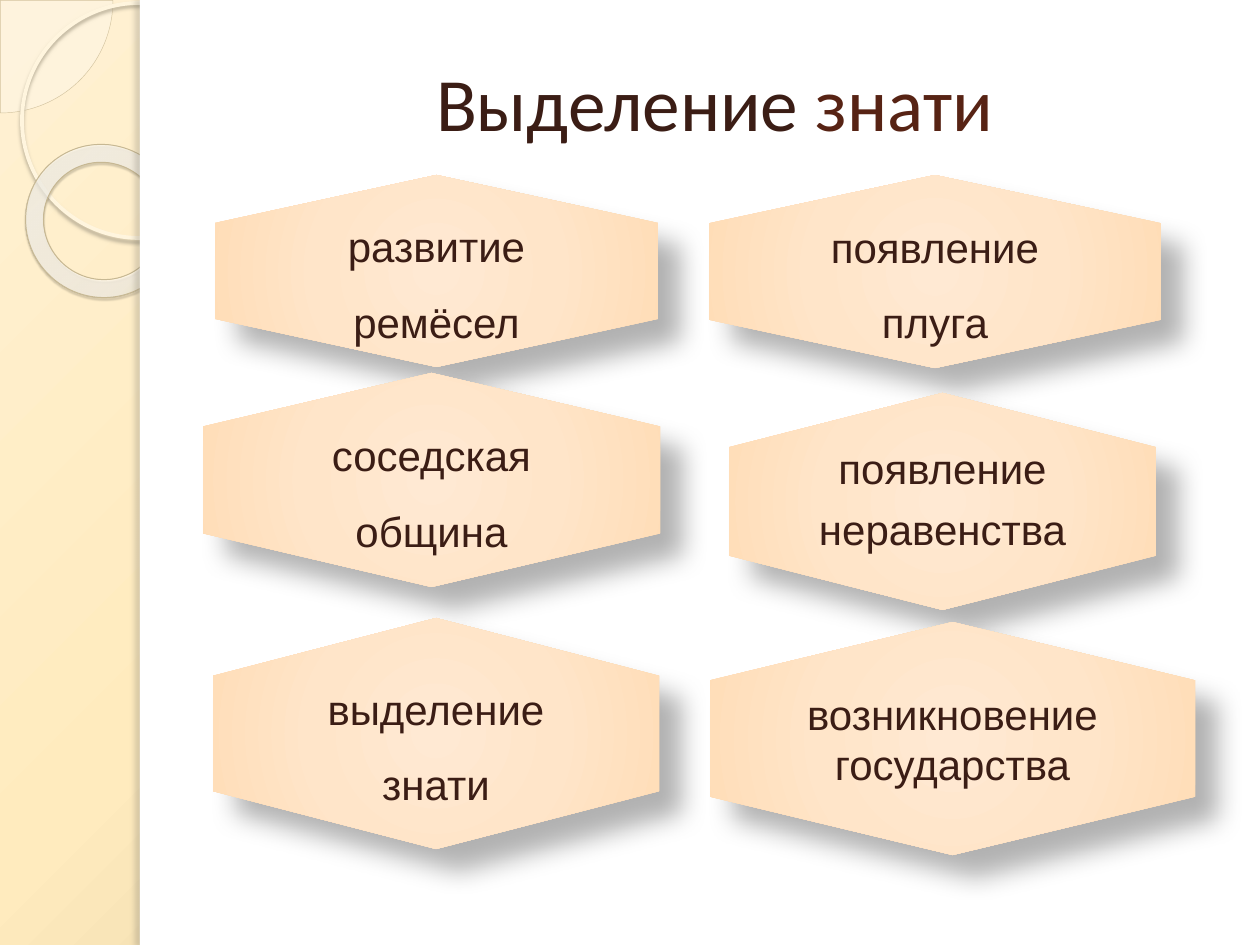
from lxml import etree
from pptx import Presentation
from pptx.dml.color import RGBColor
from pptx.enum.shapes import MSO_SHAPE
from pptx.enum.text import MSO_ANCHOR, PP_ALIGN
from pptx.oxml.ns import qn
from pptx.util import Emu, Pt

PIE, OVAL, DONUT = MSO_SHAPE.PIE, MSO_SHAPE.OVAL, MSO_SHAPE.DONUT
RECTANGLE, HEXAGON = MSO_SHAPE.RECTANGLE, MSO_SHAPE.HEXAGON
MIDDLE, CENTER = MSO_ANCHOR.MIDDLE, PP_ALIGN.CENTER
EMU_PER_PX = 914400 / 126
COLORS = {
    "white": "FFFFFF", "black": "000000", "ink": "3B1D15", "title": "572314",
    "pie": "FEFAF4", "pie_line": "D3C39F", "ring": "FFF5DE",
    "ring_shadow": "B0A68F", "donut_line": "C7B893",
    "donut_shadow": "5A5444", "edge_shadow": "736F63",
}
BACKGROUND = [(0, "FFF1D3", 100), (40, "FFEBBE", 100), (100, "C9B484", 100)]
DONUT_STOPS = [(0, "FFFCF6", 70), (70, "FFFEFB", 55), (100, "F0D28E", 60)]
PEACH = [(0, "FFE9D3", 100), (50, "FFE5C9", 100), (97, "FFDDB7", 100), (100, "FFDBB2", 100)]
HEXAGONS = [
    ((709, 175, 452, 193), ["появление плуга"], 13, 1.5),
    ((215, 175, 443, 192), ["развитие ремёсел"], 0, 1.5),
    ((203, 373, 457, 214), ["соседская община"], 13, 1.5),
    ((729, 393, 427, 217), ["появление", "неравенства"], 0, 0.9),
    ((710, 622, 485, 233), ["возникновение государства"], 13, 1.0),
    ((213, 618, 446, 231), ["выделение знати"], 0, 1.5),
]


def px(value):
    """Turn px into EMU."""
    return Emu(round(value * EMU_PER_PX))


def rgb(name):
    """Look up a named colour."""
    return RGBColor.from_string(COLORS[name])


def add_color(parent, color, alpha):
    """Append a hex colour with an opacity in percent."""
    node = etree.SubElement(parent, qn("a:srgbClr"), val=color)
    if alpha < 100:
        etree.SubElement(node, qn("a:alpha"), val=str(alpha * 1000))


def radial_fill(stops, focus):
    """Make a circular gradient around a focus rectangle in percent."""
    fill = etree.Element(qn("a:gradFill"), rotWithShape="1")
    stop_list = etree.SubElement(fill, qn("a:gsLst"))
    for position, color, alpha in stops:
        stop = etree.SubElement(stop_list, qn("a:gs"), pos=str(position * 1000))
        add_color(stop, color, alpha)
    path_node = etree.SubElement(fill, qn("a:path"), {"path": "circle"})
    sides = {side: str(value * 1000) for side, value in zip("ltrb", focus)}
    etree.SubElement(path_node, qn("a:fillToRect"), sides)
    return fill


def add_shadow(shape, color, alpha, blur, distance, angle):
    """Give a shape an outer shadow, measured in points and degrees."""
    effects = shape._element.spPr.find(qn("a:effectLst"))
    shadow = etree.SubElement(
        effects, qn("a:outerShdw"), blurRad=str(Pt(blur)), dist=str(Pt(distance)),
        dir=str(angle * 60000), algn="tl", rotWithShape="0")
    add_color(shadow, COLORS[color], alpha)


def add_figure(page, kind, box, fill=None, alpha=100, gradient=None, line=None, shadow=None):
    """Place a preset shape with its fill, line and shadow."""
    shape = page.shapes.add_shape(kind, *map(px, box))
    shape.shadow.inherit = False
    shape.fill.background()
    if fill:
        shape.fill.solid()
        shape.fill.fore_color.rgb = rgb(fill)
        if alpha < 100:
            color = shape._element.spPr.find(qn("a:solidFill"))[0]
            etree.SubElement(color, qn("a:alpha"), val=str(alpha * 1000))
    elif gradient:
        properties = shape._element.spPr
        properties.replace(properties.find(qn("a:noFill")), radial_fill(*gradient))
    if line:
        shape.line.color.rgb = rgb(line[0])
        shape.line.width = Pt(line[1])
    else:
        shape.line.fill.background()
    if shadow:
        add_shadow(shape, *shadow)
    return shape


def add_span(para, text, size, font, color):
    """Add a run of formatted text."""
    span = para.add_run()
    span.text = text
    span.font.size = Pt(size)
    span.font.name = font
    span.font.color.rgb = rgb(color)


def set_frame(frame, inset):
    """Wrap and centre a text frame vertically with equal insets."""
    frame.word_wrap = True
    frame.vertical_anchor = MIDDLE
    frame.margin_left = frame.margin_right = px(inset)
    frame.margin_top = frame.margin_bottom = px(inset)


def draw_background(page):
    """Fill the page with a warm radial gradient."""
    page.background.fill.solid()
    properties = page._element.cSld.find(qn("p:bg"))[0]
    solid = properties.find(qn("a:solidFill"))
    properties.replace(solid, radial_fill(BACKGROUND, (-24, -20, 124, 120)))


def draw_sidebar(page, box):
    """Draw the ornaments and the white panel to the right of them."""
    left, top, width, height = box
    pie = add_figure(page, PIE, (left - 112, top - 112, 225, 225), fill="pie", alpha=33,
                     line=("pie_line", 0.25))
    pie.adjustments[0], pie.adjustments[1] = 0, 54
    add_figure(page, OVAL, (left + 22, top + 3, 235, 235), line=("ring", 2.15),
               shadow=("ring_shadow", 85, 2, 2, 90))
    donut = add_figure(page, DONUT, (left + 25, top + 145, 155, 152),
                       gradient=(DONUT_STOPS, (-408, -50, 508, 150)),
                       line=("donut_line", 0.58), shadow=("donut_shadow", 35, 1, 1.2, 75))
    donut.rotation = 38.6
    donut.adjustments[0] = 0.118
    add_figure(page, RECTANGLE, (left + width, top, 1260 - width, height), fill="white")
    add_figure(page, RECTANGLE, (left + width, top, 10, height), fill="white",
               shadow=("edge_shadow", 25, 3, 3, 180))


def draw_title(page, box):
    """Place the two-coloured title above the panel."""
    title = page.shapes.title
    page.shapes._spTree.append(title._element)
    title.left, title.top, title.width, title.height = map(px, box)
    set_frame(title.text_frame, 6)
    para = title.text_frame.paragraphs[0]
    para.alignment = CENTER
    add_span(para, "Выделение", 43, "Calibri", "ink")
    add_span(para, " знати", 43, "Calibri", "title")


def draw_hexagon(page, box, lines, inset, spacing):
    """Draw an upright hexagon with a caption over its middle two thirds."""
    left, top, width, height = box
    middle_x, middle_y = left + width / 2, top + height / 2
    hexagon = add_figure(
        page, HEXAGON, (middle_x - height / 2, middle_y - width / 2, height, width),
        gradient=(PEACH, (50, 50, 50, 50)), shadow=("black", 30, 15, 18, 45))
    hexagon.rotation = 90
    caption = page.shapes.add_textbox(
        px(left + width / 6), px(top + height / 6), px(width * 2 / 3), px(height * 2 / 3))
    frame = caption.text_frame
    set_frame(frame, inset)
    for index, text in enumerate(lines):
        para = frame.add_paragraph() if index else frame.paragraphs[0]
        para.alignment = CENTER
        para.line_spacing = spacing
        para.space_after = Pt(9)
        add_span(para, text, 24, "Arial", "ink")


def main():
    """Build and save the deck."""
    deck = Presentation()
    deck.slide_width, deck.slide_height = px(1260), px(945)
    page = deck.slides.add_slide(deck.slide_layouts[5])
    draw_background(page)
    draw_sidebar(page, (0, 0, 140, 945))
    draw_title(page, (198, 38, 1033, 127))
    for hexagon in HEXAGONS:
        draw_hexagon(page, *hexagon)
    deck.save("out.pptx")


if __name__ == "__main__":
    main()
